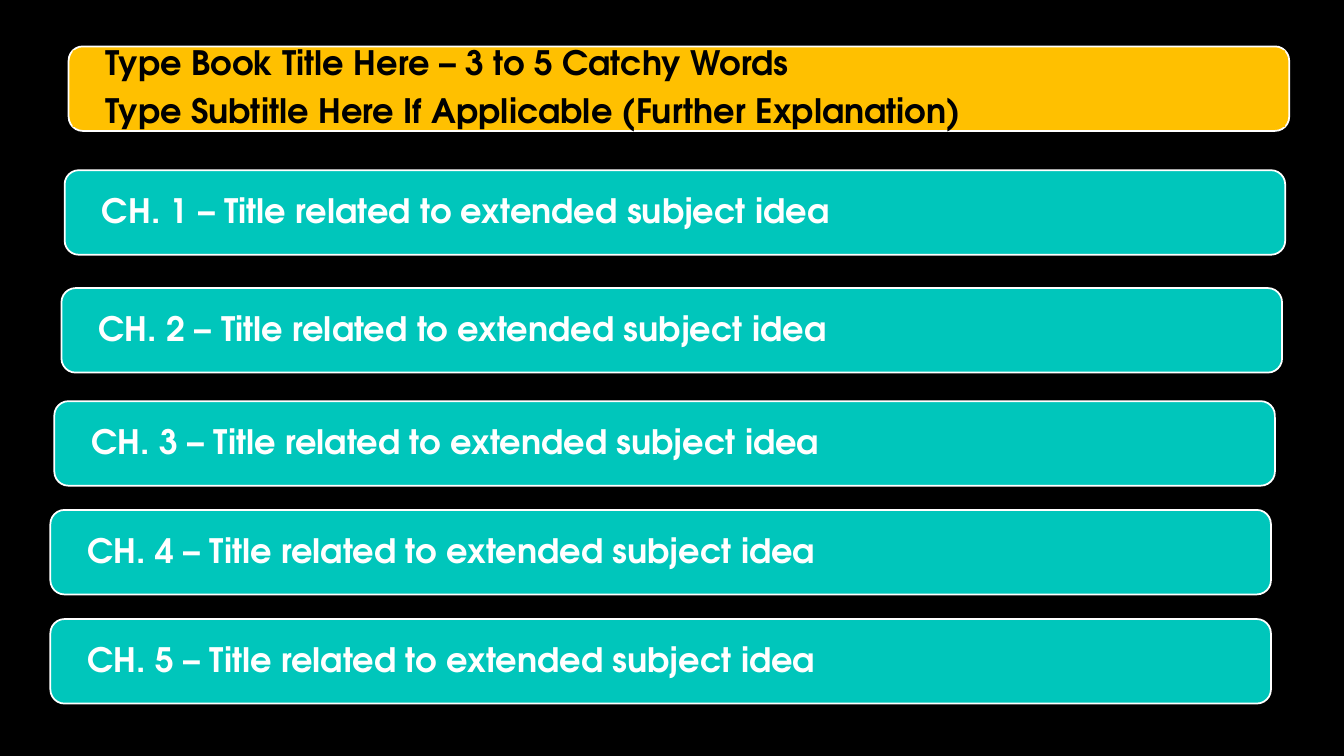
"""Build a book outline slide: one title bar above five chapter bars."""
from pptx import Presentation
from pptx import util as u
from pptx.dml.color import RGBColor
from pptx.enum import shapes, text

TITLE_LINES = [
    "Type Book Title Here – 3 to 5 Catchy Words",
    "Type Subtitle Here If Applicable (Further Explanation)",
]
CHAPTER_IDEA = "Title related to extended subject idea"
TITLE_PLACE = (1.73, 1.17)
CHAPTER_PLACES = [(1.63, 4.29), (1.55, 7.26), (1.37, 10.11), (1.27, 12.85), (1.27, 15.6)]
BAR_WIDTH, BAR_HEIGHT = 30.76, 2.13
LABEL_MARGIN, TEXT_INSET = 0.1, 0.84
FONT = "TeX Gyre Adventor"
COLORS = {"black": "000000", "white": "FFFFFF", "gold": "FFC000", "teal": "00C6BB"}


def color(name):
    return RGBColor.from_string(COLORS[name])


def add_bar(page, place, fill):
    left, top = place
    bar = page.shapes.add_shape(
        shapes.MSO_SHAPE.ROUNDED_RECTANGLE,
        u.Cm(left), u.Cm(top), u.Cm(BAR_WIDTH), u.Cm(BAR_HEIGHT))
    bar.shadow.inherit = False
    bar.fill.solid()
    bar.fill.fore_color.rgb = color(fill)
    bar.line.color.rgb = color("white")
    bar.line.width = u.Pt(1.25)


def set_label(box, place, lines, ink):
    left, top = place
    box.left, box.top = u.Cm(left + LABEL_MARGIN), u.Cm(top + LABEL_MARGIN)
    box.width = u.Cm(BAR_WIDTH - 2 * LABEL_MARGIN)
    box.height = u.Cm(BAR_HEIGHT - 2 * LABEL_MARGIN)
    frame = box.text_frame
    frame.text = "\n".join(lines)
    frame.word_wrap = True
    frame.auto_size = text.MSO_AUTO_SIZE.NONE
    frame.vertical_anchor = text.MSO_ANCHOR.MIDDLE
    frame.margin_left = frame.margin_right = u.Cm(TEXT_INSET)
    frame.margin_top = frame.margin_bottom = 0
    for para in frame.paragraphs:
        para.alignment = text.PP_ALIGN.LEFT
        para.line_spacing = 0.9
        para.space_before = u.Pt(0)
        para.space_after = u.Pt(8.4)
        for span in para.runs:
            span.font.name = FONT
            span.font.size = u.Pt(24)
            span.font.bold = True
            span.font.color.rgb = color(ink)


def main():
    deck = Presentation()
    deck.slide_width, deck.slide_height = u.Cm(33.87), u.Cm(19.05)
    page = deck.slides.add_slide(deck.slide_layouts.get_by_name("Title Only"))
    page.background.fill.solid()
    page.background.fill.fore_color.rgb = color("black")

    add_bar(page, TITLE_PLACE, "gold")
    title = page.shapes.title
    title.element.getparent().append(title.element)
    title.fill.solid()
    title.fill.fore_color.rgb = color("gold")
    set_label(title, TITLE_PLACE, TITLE_LINES, "black")

    for number, place in enumerate(CHAPTER_PLACES, start=1):
        add_bar(page, place, "teal")
        label = page.shapes.add_textbox(0, 0, 0, 0)
        set_label(label, place, [f"CH. {number} – {CHAPTER_IDEA}"], "white")

    deck.save("out.pptx")


if __name__ == "__main__":
    main()
